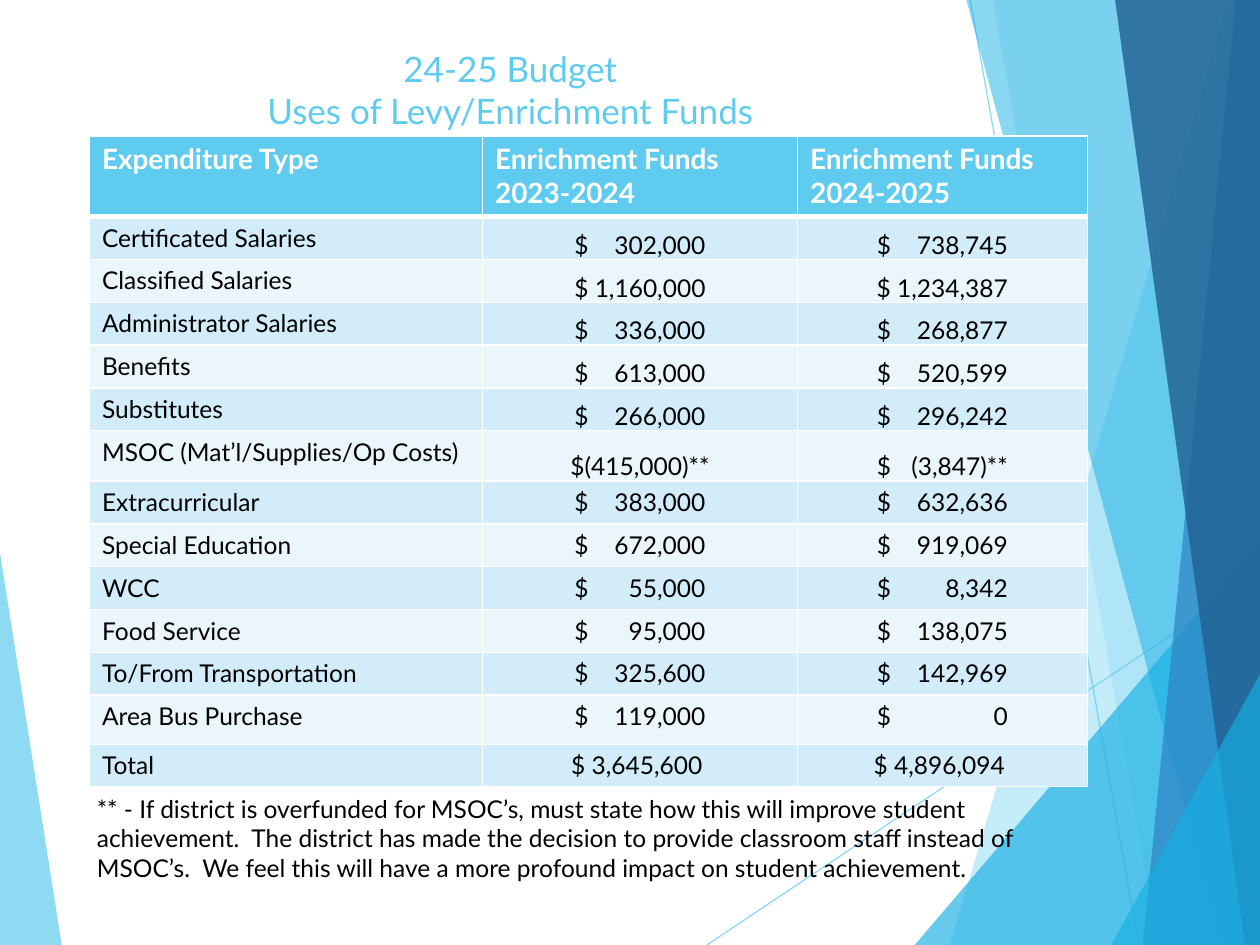
from dataclasses import dataclass

from lxml.etree import SubElement as Sub
from pptx import Presentation
from pptx.dml.color import RGBColor as Rgb
from pptx.enum.shapes import MSO_CONNECTOR as Conn
from pptx.enum.text import MSO_ANCHOR as Anchor, MSO_AUTO_SIZE as Fit, PP_ALIGN as Align
from pptx.oxml import parse_xml
from pptx.oxml.ns import nsdecls, qn
from pptx.util import Inches, Pt

FONT = "Lato"
HEX = {
    "sky": "5FCBEF", "cyan": "17B0E4", "blue": "2E83C3", "navy": "226292",
    "white": "FFFFFF", "black": "000000", "odd": "D2ECF9", "even": "EAF6FC",
}


@dataclass
class Facet:
    color: str
    alpha: int
    points: list[tuple[float, float]]


@dataclass
class Ray:
    start: tuple[float, float]
    end: tuple[float, float]


@dataclass
class Use:
    name: str
    last: str
    new: str
    high: float = 0.34
    low: bool = False  # amounts sit on the bottom edge of the row


EDGE = Facet("sky", 70, [(0, 4.39), (0.49, 7.5), (0, 7.5)])
RAYS = [Ray((5.61, 7.5), (10, 4.57)), Ray((7.7, 0), (9.04, 7.5))]
FACETS = [
    Facet("sky", 36, [(9.75, 0), (7.54, 7.5), (10, 7.5), (10, 0)]),
    Facet("sky", 20, [(7.88, 0), (9.19, 7.5), (10, 7.5), (10, 0)]),
    Facet("cyan", 66, [(7.26, 7.5), (10, 4.29), (10, 7.5)]),
    Facet("cyan", 50, [(7.67, 0), (9.7, 7.5), (10, 7.5), (10, 0)]),
    Facet("blue", 70, [(9.81, 0), (9.07, 7.5), (10, 7.5), (10, 0)]),
    Facet("navy", 82, [(8.85, 0), (9.88, 7.5), (10, 7.5), (10, 0)]),
    Facet("cyan", 66, [(8.82, 7.5), (10, 5.35), (10, 7.5)]),
]

HEAD = ["Expenditure Type", "Enrichment Funds\n2023-2024", "Enrichment Funds\n2024-2025"]
WIDTHS = [3.12, 2.5, 2.3]
SUM = 1.04  # width from the dollar sign to the last digit
USES = [
    Use("Certificated Salaries", "$\t302,000", "$\t738,745", low=True),
    Use("Classified Salaries", "$ 1,160,000", "$ 1,234,387", low=True),
    Use("Administrator Salaries", "$\t336,000", "$\t268,877", low=True),
    Use("Benefits", "$\t613,000", "$\t520,599", low=True),
    Use("Substitutes", "$\t266,000", "$\t296,242", low=True),
    Use("MSOC (Mat’l/Supplies/Op Costs)", "$(415,000)**", "$\t(3,847)**", 0.4, True),
    Use("Extracurricular", "$\t383,000", "$\t632,636"),
    Use("Special Education", "$\t672,000", "$\t919,069"),
    Use("WCC", "$\t55,000", "$\t8,342"),
    Use("Food Service", "$\t95,000", "$\t138,075"),
    Use("To/From Transportation", "$\t325,600", "$\t142,969"),
    Use("Area Bus Purchase", "$\t119,000", "$\t0", 0.39),
    Use("Total", "$ 3,645,600 ", "$ 4,896,094 ", 0.32),
]
NOTE = (
    "** - If district is overfunded for MSOC’s, must state how this will improve student "
    "achievement.  The district has made the decision to provide classroom staff instead of "
    "MSOC’s.  We feel this will have a more profound impact on student achievement."
)


def paint(fill, color: str) -> None:
    fill.solid()
    fill.fore_color.rgb = Rgb.from_string(HEX[color])


def fade(shape, alpha: int) -> None:
    for node in shape._element.spPr.iter(qn("a:srgbClr")):
        Sub(node, qn("a:alpha"), val=str(alpha * 1000))


def write(frame, text: str, size: int, color: str, bold: bool = False, align=Align.LEFT) -> None:
    frame.text = text
    for para in frame.paragraphs:
        para.alignment = align
        font = para.font
        font.name, font.size, font.bold = FONT, Pt(size), bold
        font.color.rgb = Rgb.from_string(HEX[color])


def draw_facet(slide, facet: Facet) -> None:
    first, *rest = [(Inches(x), Inches(y)) for x, y in facet.points]
    pen = slide.shapes.build_freeform(*first)
    pen.add_line_segments(rest, close=True)
    shape = pen.convert_to_shape()
    shape.shadow.inherit = False
    paint(shape.fill, facet.color)
    shape.line.fill.background()
    fade(shape, facet.alpha)


def draw_ray(slide, ray: Ray) -> None:
    ends = [Inches(n) for n in ray.start + ray.end]
    line = slide.shapes.add_connector(Conn.STRAIGHT, *ends)
    line.line.width = Pt(0.75)
    line.line.color.rgb = Rgb.from_string(HEX["sky"])
    fade(line, 70)
    Sub(line._element.spPr, qn("a:effectLst"))


def set_cell(cell, text: str, fill: str, head: bool = False) -> None:
    if head:
        write(cell.text_frame, text, 16, "white", True)
    else:
        write(cell.text_frame, text, 14, "black")
    # Borders come before the fill in the cell properties
    props = cell._tc.get_or_add_tcPr()
    for side in "LRTB":
        wide = Pt(3 if head and side == "B" else 1)
        props.append(parse_xml(
            f'<a:ln{side} {nsdecls("a")} w="{wide}"><a:solidFill>'
            f'<a:srgbClr val="{HEX["white"]}"/></a:solidFill></a:ln{side}>'))
    paint(cell.fill, fill)


def set_sum(cell, wide: float, low: bool) -> None:
    para = cell.text_frame.paragraphs[0]
    if low:
        cell.vertical_anchor = Anchor.BOTTOM
        cell.margin_top, cell.margin_bottom = Inches(0.01), 0
    if "\t" in cell.text_frame.text:
        # Dollar sign on the left, digits on a right tab
        cell.margin_left, cell.margin_right = Inches((wide - SUM) / 2), Inches(0.01)
        props = para._p.get_or_add_pPr()
        props.insert(0, parse_xml(
            f'<a:tabLst {nsdecls("a")}><a:tab pos="{Inches(SUM)}" algn="r"/></a:tabLst>'))
    else:
        para.alignment = Align.CENTER


def draw_table(slide) -> None:
    highs = [0.64] + [use.high for use in USES]
    box = [Inches(n) for n in (0.71, 1.08, sum(WIDTHS), sum(highs))]
    table = slide.shapes.add_table(len(highs), len(WIDTHS), *box).table
    for col, wide in zip(table.columns, WIDTHS):
        col.width = Inches(wide)
    for row, high in zip(table.rows, highs):
        row.height = Inches(high)
    for col, text in enumerate(HEAD):
        set_cell(table.cell(0, col), text, "sky", True)
    for row, use in enumerate(USES, 1):
        for col, text in enumerate((use.name, use.last, use.new)):
            cell = table.cell(row, col)
            set_cell(cell, text, "odd" if row % 2 else "even")
            if col:
                set_sum(cell, WIDTHS[col], use.low)


def main() -> None:
    deck = Presentation()
    deck.slide_width, deck.slide_height = Inches(10), Inches(7.5)
    slide = deck.slides.add_slide(deck.slide_layouts[5])

    # Background facets
    draw_facet(slide, EDGE)
    for ray in RAYS:
        draw_ray(slide, ray)
    for facet in FACETS:
        draw_facet(slide, facet)

    # Title
    title = slide.shapes.title
    title.left, title.top = Inches(0.58), Inches(0.33)
    title.width, title.height = Inches(6.94), Inches(0.67)
    frame = title.text_frame
    frame.auto_size, frame.vertical_anchor = Fit.NONE, Anchor.TOP
    write(frame, "24-25 Budget\vUses of Levy/Enrichment Funds", 20, "sky", align=Align.CENTER)

    # Budget table and footnote
    draw_table(slide)
    note = slide.shapes.add_textbox(Inches(0.67), Inches(6.25), Inches(7.92), Inches(0.81))
    note.text_frame.word_wrap = True
    write(note.text_frame, NOTE, 14, "black")

    deck.save("out.pptx")


if __name__ == "__main__":
    main()
